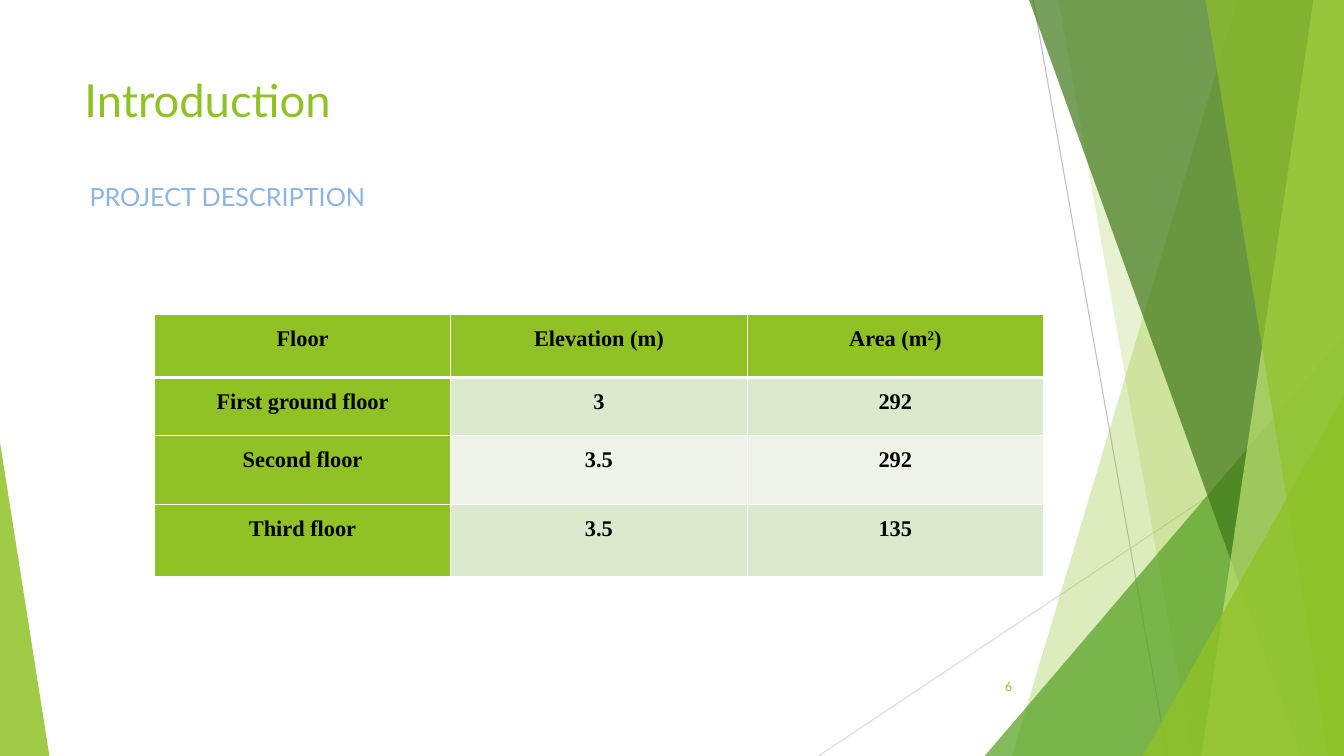
from pptx import Presentation
from pptx.dml.color import RGBColor as RGB
from pptx.enum.shapes import MSO_CONNECTOR as CONN, MSO_SHAPE as SHAPE
from pptx.enum.text import MSO_ANCHOR as ANCHOR, PP_ALIGN as ALIGN
from pptx.oxml import parse_xml
from pptx.oxml.ns import nsdecls
from pptx.util import Pt
from lxml import etree

W, H = 960, 540
COLORS = {
    "lime": "90C226", "green": "54A021", "forest": "3F7819", "pale": "C0E474",
    "blue": "8EB4E3", "black": "000000", "white": "FFFFFF",
    "band_dark": "DBE9CD", "band_light": "EEF4E8",
    "line_dark": "BFBFBF", "line_light": "D9D9D9",
}
NS = nsdecls("a")


def rgb(name):
    return RGB.from_string(COLORS[name])


def style(font, name, size, color):
    font.name, font.size = name, Pt(size)
    font.color.rgb = rgb(color)


prs = Presentation()
prs.slide_width, prs.slide_height = Pt(W), Pt(H)
s = prs.slides.add_slide(prs.slide_layouts[6])

# Thin background lines
for x1, y1, x2, y2, color in [(738, 0, 833.8, H, "line_dark"),
                              (W, 290, 584.6, H, "line_light")]:
    line = s.shapes.add_connector(CONN.STRAIGHT, Pt(x1), Pt(y1), Pt(x2), Pt(y2))
    line.line.color.rgb = rgb(color)
    line.line.width = Pt(0.75)
    line._element.spPr.append(parse_xml(f"<a:effectLst {NS}/>"))

# Translucent facets, back to front. A band runs from its top x and bottom x
# to the right edge; a wedge is left, top, width and apex position.
facets = [
    ("band", (884.2, 722.9), "lime", 30),
    ("band", (756, 851.8), "lime", 20),
    ("wedge", (703.4, 239.8, 256.6, 1), "green", 72),
    ("band", (735.1, 929.5), "forest", 70),
    ("band", (938.2, 858.2), "pale", 70),
    ("band", (861.1, 949), "lime", 65),
    ("wedge", (816.5, 283, 143.5, 1), "lime", 80),
    ("wedge", (0, 316, 35.3, 0), "lime", 85),
]
for kind, geometry, color, opacity in facets:
    if kind == "band":
        top_x, bottom_x = geometry
        outline = s.shapes.build_freeform(Pt(top_x), 0)
        outline.add_line_segments([(Pt(W), 0), (Pt(W), Pt(H)), (Pt(bottom_x), Pt(H))])
        sp = outline.convert_to_shape()
    else:
        left, top, width, apex = geometry
        sp = s.shapes.add_shape(SHAPE.ISOSCELES_TRIANGLE,
                                Pt(left), Pt(top), Pt(width), Pt(H - top))
        sp.adjustments[0] = apex
    sp.shadow.inherit = False
    sp.line.fill.background()
    sp.fill.solid()
    sp.fill.fore_color.rgb = rgb(color)
    srgb = sp._element.spPr.find(".//{*}solidFill/{*}srgbClr")
    etree.SubElement(srgb, srgb.tag.replace("srgbClr", "alpha"), val=str(opacity * 1000))

# Title and subtitle
tf = s.shapes.add_textbox(Pt(53.3), Pt(48.2), Pt(676.8), Pt(103.7)).text_frame
tf.word_wrap = True
p = tf.paragraphs[0]
p.text = "Introduction"
style(p.font, "Lato", 32.4, "lime")
p = tf.add_paragraph()
p.text = "PROJECT DESCRIPTION"
p.space_before = Pt(39)
p._p.get_or_add_pPr().set("marL", str(Pt(3.6)))
style(p.font, "Lato", 18, "blue")

# Floor table
rows = [
    ("Floor", "Elevation (m)", "Area (m²)"),
    ("First ground floor", "3", "292"),
    ("Second floor", "3.5", "292"),
    ("Third floor", "3.5", "135"),
]
row_heights = [45, 41.5, 49.3, 51.2]
table = s.shapes.add_table(4, 3, Pt(110.3), Pt(224.6), Pt(635.1), Pt(187)).table
for column in table.columns:
    column.width = Pt(211.7)
for i, (texts, height) in enumerate(zip(rows, row_heights)):
    table.rows[i].height = Pt(height)
    for j, text in enumerate(texts):
        cell = table.cell(i, j)
        cell.margin_left = cell.margin_right = Pt(5)
        cell.margin_top = cell.margin_bottom = 0
        cell.fill.solid()
        band = "band_dark" if i % 2 else "band_light"
        cell.fill.fore_color.rgb = rgb("lime" if i == 0 or j == 0 else band)

        p = cell.text_frame.paragraphs[0]
        base, squared, rest = text.partition("²")
        p.add_run().text = base
        if squared:
            r = p.add_run()
            r.text = "2"
            r.font._element.set("baseline", "30000")
            p.add_run().text = rest
        p.alignment = ALIGN.CENTER
        p.line_spacing, p.space_after = 1.5, Pt(8)
        style(p.font, "Times New Roman", 16, "black")
        p.font.bold = True

        # White borders, heavier under the header
        widths = {"L": 1, "R": 1, "T": 3 if i == 1 else 1, "B": 3 if i == 0 else 1}
        for k, (side, width) in enumerate(widths.items()):
            cell._tc.tcPr.insert(k, parse_xml(
                f'<a:ln{side} {NS} w="{Pt(width)}"><a:solidFill>'
                f'<a:srgbClr val="{COLORS["white"]}"/></a:solidFill></a:ln{side}>'))

# Slide number
tf = s.shapes.add_textbox(Pt(676), Pt(476), Pt(54), Pt(28.8)).text_frame
tf.word_wrap = True
tf.vertical_anchor = ANCHOR.MIDDLE
p = tf.paragraphs[0]
p.text = "6"
p.alignment = ALIGN.RIGHT
style(p.font, "Lato", 9, "lime")

prs.save("out.pptx")
